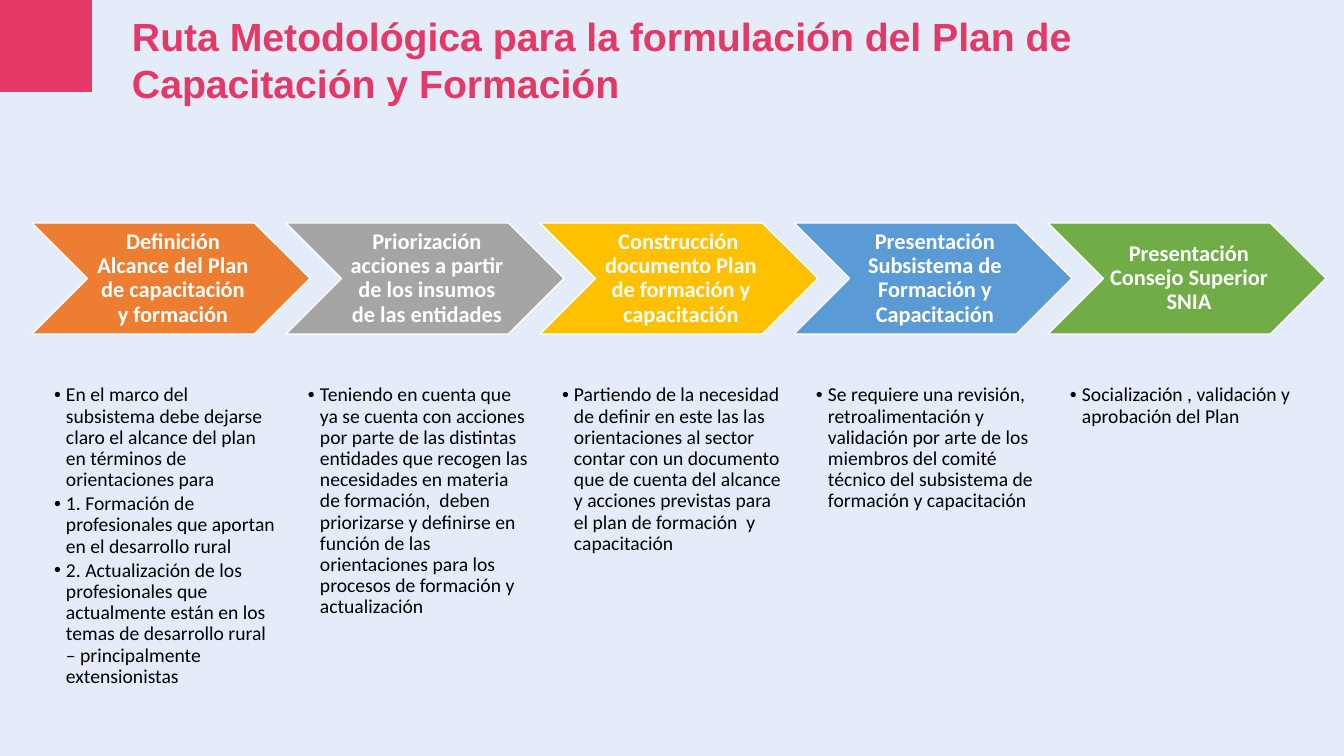
from dataclasses import dataclass

import lxml.etree
import pptx
import pptx.dml.color
import pptx.enum.shapes
import pptx.enum.text
import pptx.oxml.ns
import pptx.util

EMU_PER_PX = 12192000 / 1344


@dataclass(frozen=True)
class Theme:
    background: str = "E3ECF8"
    accent: str = "E43866"
    white: str = "FFFFFF"
    black: str = "000000"
    title_font: str = "Arial"
    body_font: str = "Calibri"
    title_size: int = 28
    step_size: int = 16
    body_size: int = 14


@dataclass(frozen=True)
class Box:
    left: int
    top: int
    width: int
    height: int


@dataclass(frozen=True)
class TextStyle:
    font: str
    size: int
    color: str
    bold: bool = False


@dataclass(frozen=True)
class Step:
    color: str
    heading: str
    bullets: tuple[str, ...]


THEME = Theme()
TITLE_STYLE = TextStyle(THEME.title_font, THEME.title_size, THEME.accent, True)
STEP_STYLE = TextStyle(THEME.body_font, THEME.step_size, THEME.white, True)
BODY_STYLE = TextStyle(THEME.body_font, THEME.body_size, THEME.black)

TITLE = "Ruta Metodológica para la formulación del Plan de Capacitación y Formación"
FIRST_LEFT = 32
STEP_PITCH = 254
BULLET_INDENT = 12

STEPS = (
    Step("ED7D31", "Definición Alcance del Plan de capacitación y formación", (
        "En el marco del subsistema debe dejarse claro el alcance del plan "
        "en términos de orientaciones para",
        "1. Formación de profesionales que aportan en el desarrollo rural",
        "2. Actualización de los profesionales que actualmente están en los "
        "temas de desarrollo rural – principalmente extensionistas",
    )),
    Step("A5A5A5", "Priorización acciones a partir de los insumos de las entidades", (
        "Teniendo en cuenta que ya se cuenta con acciones por parte de las "
        "distintas entidades que recogen las necesidades en materia de "
        "formación,  deben priorizarse y definirse en función de las "
        "orientaciones para los procesos de formación y actualización",
    )),
    Step("FFC000", "Construcción  documento Plan de formación y capacitación", (
        "Partiendo de la necesidad de definir en este las las orientaciones "
        "al sector contar con un documento que de cuenta del alcance y "
        "acciones previstas para el plan de formación  y capacitación",
    )),
    Step("5B9BD5", "Presentación Subsistema de Formación y Capacitación", (
        "Se requiere una revisión, retroalimentación y validación por arte "
        "de los miembros del comité técnico del subsistema de formación y "
        "capacitación",
    )),
    Step("70AD47", "Presentación Consejo Superior SNIA", (
        "Socialización , validación y aprobación del Plan",
    )),
)


def px(value: int) -> pptx.util.Emu:
    return pptx.util.Emu(round(value * EMU_PER_PX))


def rgb(color: str) -> pptx.dml.color.RGBColor:
    return pptx.dml.color.RGBColor.from_string(color)


def place(box: Box) -> tuple[pptx.util.Emu, ...]:
    return px(box.left), px(box.top), px(box.width), px(box.height)


def add_shape(s, kind, box: Box, fill: str, line: str | None = None) -> None:
    sp = s.shapes.add_shape(kind, *place(box))
    sp.shadow.inherit = False
    sp.fill.solid()
    sp.fill.fore_color.rgb = rgb(fill)
    if line is None:
        sp.line.fill.background()
    else:
        sp.line.color.rgb = rgb(line)
        sp.line.width = pptx.util.Pt(1)


def add_text(s, box: Box, texts: tuple[str, ...], style: TextStyle,
             insets: tuple[int, int, int, int]) -> pptx.text.text.TextFrame:
    tf = s.shapes.add_textbox(*place(box)).text_frame
    tf.word_wrap = True
    tf.margin_left, tf.margin_top, tf.margin_right, tf.margin_bottom = map(px, insets)
    for i, text in enumerate(texts):
        p = tf.paragraphs[0] if i == 0 else tf.add_paragraph()
        r = p.add_run()
        r.text = text
        r.font.name = style.font
        r.font.size = pptx.util.Pt(style.size)
        r.font.bold = style.bold
        r.font.color.rgb = rgb(style.color)
    return tf


def add_bullet(p) -> None:
    p.level = 1
    p.line_spacing = 0.9
    p.space_after = pptx.util.Pt(2.1)
    p_pr = p._p.get_or_add_pPr()
    p_pr.set("marL", str(px(BULLET_INDENT)))
    p_pr.set("indent", str(-px(BULLET_INDENT)))
    bullet_font = lxml.etree.SubElement(p_pr, pptx.oxml.ns.qn("a:buFont"))
    bullet_font.set("typeface", "Arial")
    lxml.etree.SubElement(p_pr, pptx.oxml.ns.qn("a:buChar")).set("char", "•")


def add_step(s, step: Step, left: int) -> None:
    chevron = pptx.enum.shapes.MSO_SHAPE.CHEVRON
    add_shape(s, chevron, Box(left, 223, 278, 111), step.color, THEME.white)
    tf = add_text(s, Box(left + 55, 223, 167, 111), (step.heading,), STEP_STYLE, (7, 2, 2, 2))
    tf.vertical_anchor = pptx.enum.text.MSO_ANCHOR.MIDDLE
    p = tf.paragraphs[0]
    p.alignment = pptx.enum.text.PP_ALIGN.CENTER
    p.line_spacing = 0.9
    tf = add_text(s, Box(left + 22, 385, 223, 314), step.bullets, BODY_STYLE, (0, 0, 0, 0))
    for p in tf.paragraphs:
        add_bullet(p)


def main() -> None:
    prs = pptx.Presentation()
    prs.slide_width, prs.slide_height = px(1344), px(756)
    s = prs.slides.add_slide(prs.slide_layouts[6])
    s.background.fill.solid()
    s.background.fill.fore_color.rgb = rgb(THEME.background)
    add_shape(s, pptx.enum.shapes.MSO_SHAPE.RECTANGLE, Box(0, 0, 92, 92), THEME.accent)
    add_text(s, Box(122, 7, 1171, 105), (TITLE,), TITLE_STYLE, (10, 5, 10, 5))
    for i, step in enumerate(STEPS):
        add_step(s, step, FIRST_LEFT + i * STEP_PITCH)
    prs.save("out.pptx")


if __name__ == "__main__":
    main()
